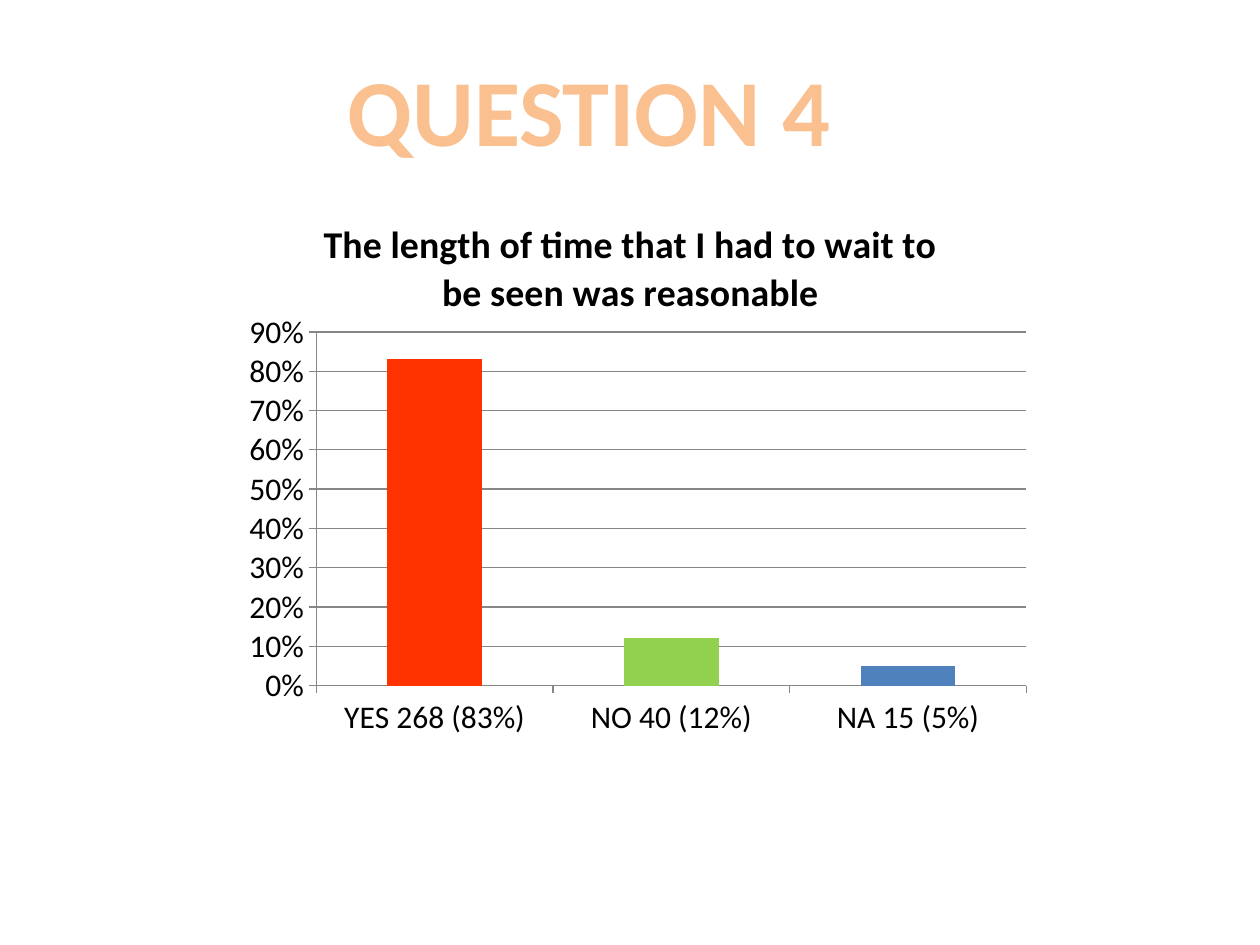
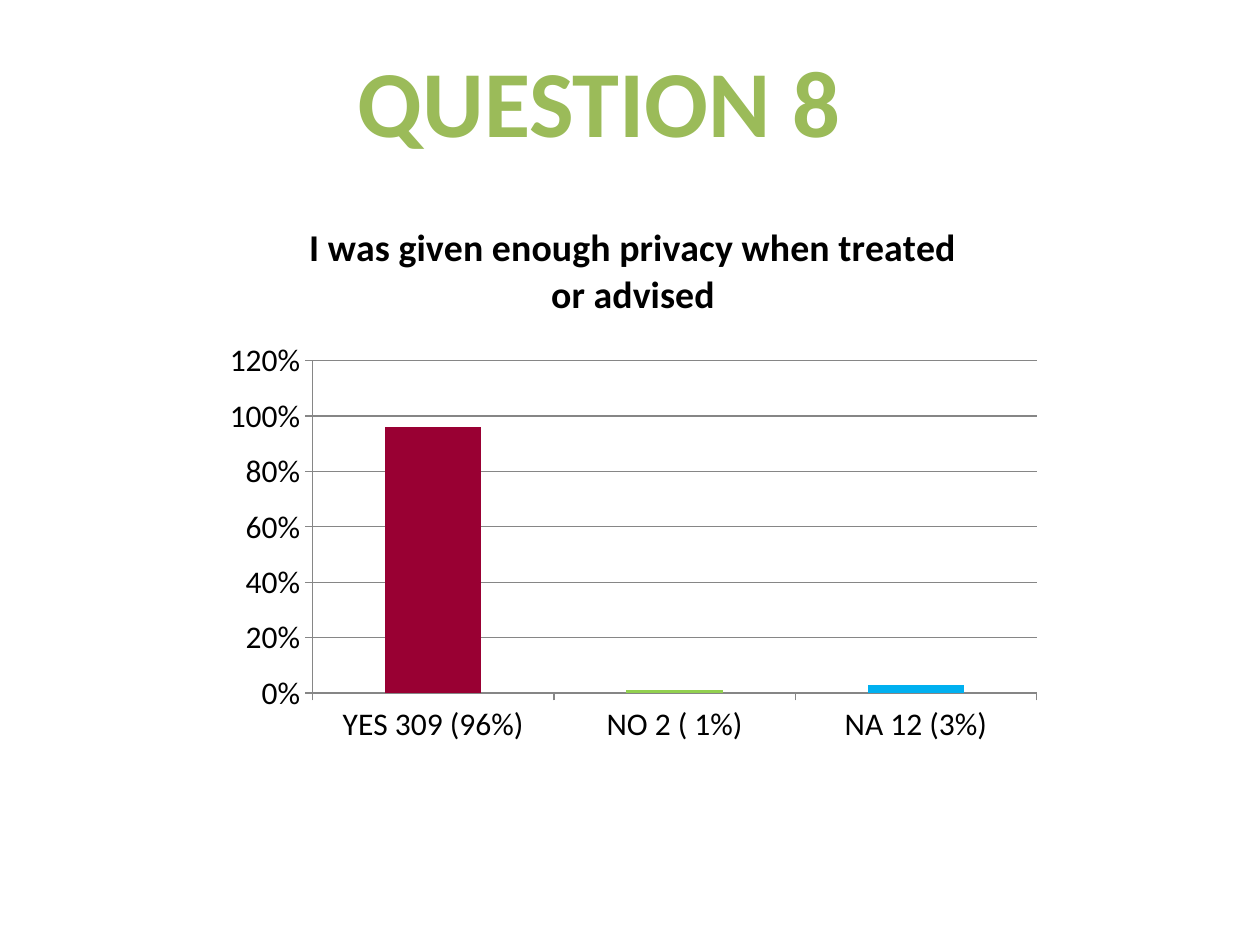
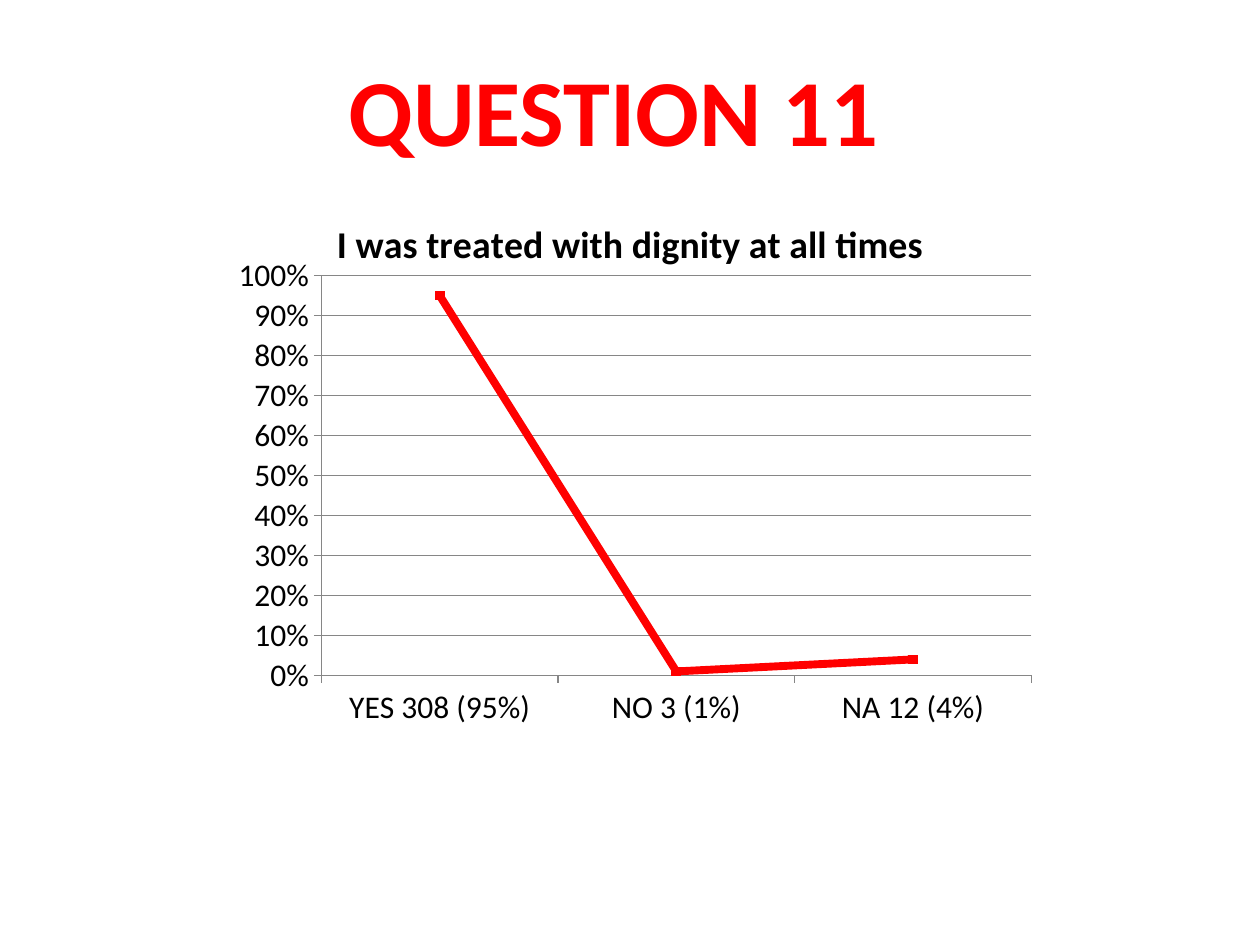
from lxml.etree import SubElement
from pptx import Presentation
from pptx.chart.data import CategoryChartData
from pptx.dml.color import RGBColor
from pptx.enum.chart import XL_CHART_TYPE, XL_MARKER_STYLE, XL_TICK_MARK
from pptx.enum.text import MSO_ANCHOR, MSO_AUTO_SIZE, PP_ALIGN
from pptx.oxml.ns import qn
from pptx.util import Inches, Pt

FONT = "Calibri"
BLACK = "000000"
AXIS_GREY = "868686"
RED = "FF0000"
TITLE_ONLY = 5
CHART_WIDTH, CHART_HEIGHT = 6.67, 4.44


def colour(hex_code):
    return RGBColor.from_string(hex_code)


def style_font(font, size, hex_code, bold=False):
    font.name = FONT
    font.size = Pt(size)
    font.bold = bold
    font.color.rgb = colour(hex_code)


def add_question_slide(presentation, number, hex_code, left, top, width):
    slide = presentation.slides.add_slide(presentation.slide_layouts[TITLE_ONLY])
    title = slide.shapes.title
    title.left, title.top = Inches(left), Inches(top)
    title.width, title.height = Inches(width), Inches(1.01)
    frame = title.text_frame
    frame.text = f"QUESTION {number}"
    frame.word_wrap = False
    frame.auto_size = MSO_AUTO_SIZE.SHAPE_TO_FIT_TEXT
    frame.vertical_anchor = MSO_ANCHOR.TOP
    paragraph = frame.paragraphs[0]
    paragraph.alignment = PP_ALIGN.CENTER
    style_font(paragraph.font, 54, hex_code, bold=True)
    return slide


def place_plot(chart, x, y, w, h):
    """Fix the inner plot area, as fractions of the chart."""
    plot_area = chart._chartSpace.chart.plotArea
    for old_layout in plot_area.findall(qn("c:layout")):
        plot_area.remove(old_layout)
    layout = SubElement(plot_area, qn("c:layout"))
    plot_area.insert(0, layout)
    manual = SubElement(layout, qn("c:manualLayout"))
    settings = {"layoutTarget": "inner", "xMode": "edge", "yMode": "edge",
                "x": x, "y": y, "w": w, "h": h}
    for tag, value in settings.items():
        SubElement(manual, qn(f"c:{tag}")).set("val", str(value))


def style_axes(chart, maximum, step):
    for axis in (chart.category_axis, chart.value_axis):
        axis.major_tick_mark = XL_TICK_MARK.OUTSIDE
        axis.minor_tick_mark = XL_TICK_MARK.NONE
        axis.format.line.color.rgb = colour(AXIS_GREY)
        axis.format.line.width = Pt(0.75)
    axis = chart.value_axis
    axis.minimum_scale, axis.maximum_scale, axis.major_unit = 0, maximum, step
    axis.tick_labels.number_format = "0%"
    axis.tick_labels.number_format_is_linked = False
    axis.has_major_gridlines = True
    gridline = axis.major_gridlines.format.line
    gridline.color.rgb = colour(AXIS_GREY)
    gridline.width = Pt(0.75)


def add_answer_chart(slide, kind, statement, answers, left, top, maximum, step):
    data = CategoryChartData(number_format="0%")
    data.categories = list(answers)
    data.add_series(statement, list(answers.values()))
    chart = slide.shapes.add_chart(
        kind, Inches(left), Inches(top),
        Inches(CHART_WIDTH), Inches(CHART_HEIGHT), data).chart
    style_font(chart.font, 18, BLACK)
    chart.has_legend = False
    chart.has_title = True
    chart.chart_title.include_in_layout = False
    frame = chart.chart_title.text_frame
    frame.text = statement
    style_font(frame.paragraphs[0].font, 21.6, BLACK, bold=True)
    style_axes(chart, maximum, step)
    return chart


def colour_columns(chart, hex_codes):
    plot = chart.plots[0]
    plot.gap_width = 150
    plot.vary_by_categories = False
    for index, hex_code in enumerate(hex_codes):
        fill = plot.series[0].points[index].format.fill
        fill.solid()
        fill.fore_color.rgb = colour(hex_code)


def style_line(chart, hex_code):
    plot = chart.plots[0]
    plot.vary_by_categories = False
    series = plot.series[0]
    series.smooth = False
    series.format.line.color.rgb = colour(hex_code)
    series.format.line.width = Pt(4.5)
    marker = series.marker
    marker.style = XL_MARKER_STYLE.SQUARE
    marker.size = 5
    marker.format.fill.solid()
    marker.format.fill.fore_color.rgb = colour(hex_code)
    marker.format.line.color.rgb = colour(hex_code)


def main():
    presentation = Presentation()
    presentation.slide_width, presentation.slide_height = Inches(10), Inches(7.5)

    # Waiting time
    slide = add_question_slide(presentation, 4, "FAC090", 2.64, 0.36, 4.07)
    chart = add_answer_chart(
        slide, XL_CHART_TYPE.COLUMN_CLUSTERED,
        "The length of time that I had to wait to be seen was reasonable",
        {"YES 268 (83%)": 0.83, "NO 40 (12%)": 0.12, "NA 15 (5%)": 0.05},
        1.67, 1.53, maximum=0.9, step=0.1)
    place_plot(chart, 0.126, 0.249, 0.845, 0.632)
    colour_columns(chart, ["FF3300", "92D050", "4F81BD"])

    # Privacy
    slide = add_question_slide(presentation, 8, "9BBB59", 2.72, 0.29, 4.07)
    chart = add_answer_chart(
        slide, XL_CHART_TYPE.COLUMN_CLUSTERED,
        "I was given enough privacy when treated or advised",
        {"YES 309 (96%)": 0.96, "NO 2 ( 1%)": 0.01, "NA 12 (3%)": 0.03},
        1.69, 1.55, maximum=1.2, step=0.2)
    colour_columns(chart, ["990033", "92D050", "00B0F0"])

    # Dignity
    slide = add_question_slide(presentation, 11, RED, 2.64, 0.36, 4.46)
    chart = add_answer_chart(
        slide, XL_CHART_TYPE.LINE_MARKERS_STACKED,
        "I was treated with dignity at all times",
        {"YES 308 (95%)": 0.95, "NO 3 (1%)": 0.01, "NA 12 (4%)": 0.04},
        1.67, 1.53, maximum=1, step=0.1)
    place_plot(chart, 0.132, 0.148, 0.845, 0.715)
    style_line(chart, RED)

    presentation.save("out.pptx")


if __name__ == "__main__":
    main()
